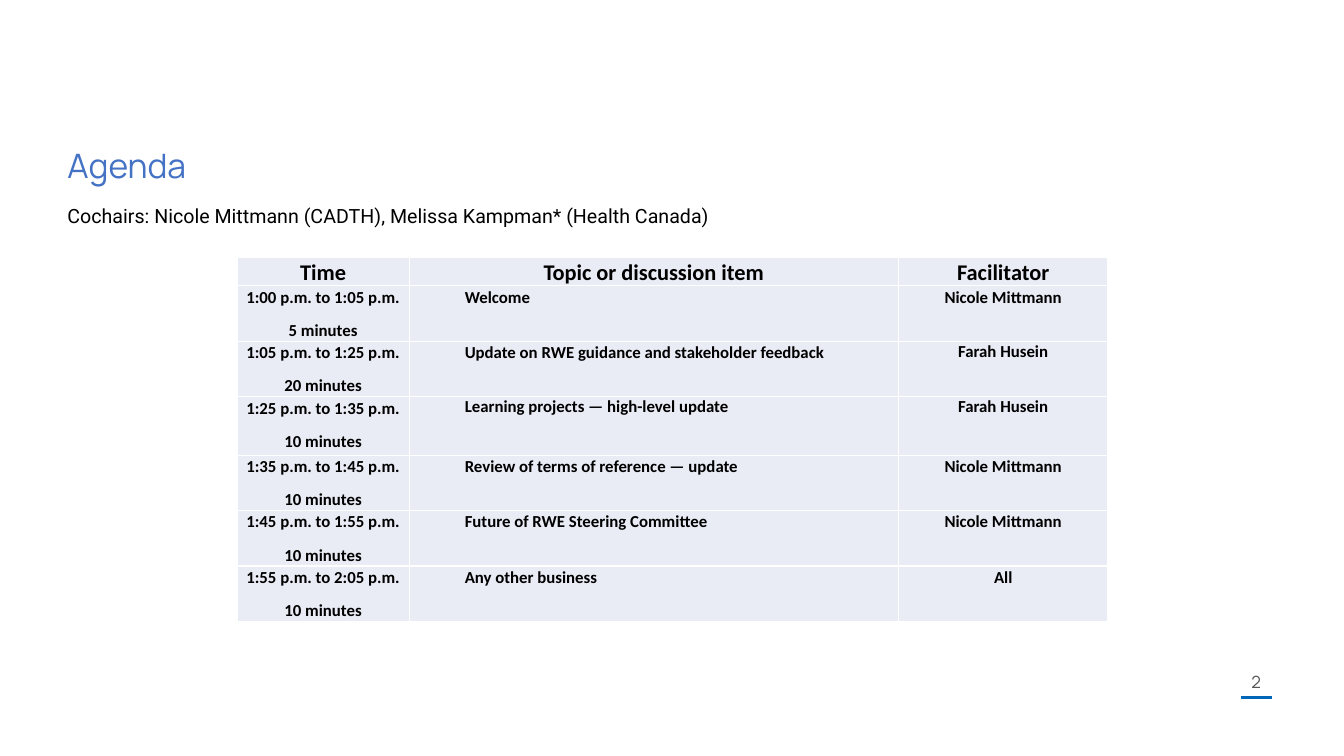
"""Build the agenda slide with its timetable."""
from lxml import etree
from pptx import Presentation
from pptx.dml.color import RGBColor
from pptx.enum.shapes import MSO_CONNECTOR
from pptx.enum.text import MSO_ANCHOR, PP_ALIGN
from pptx.oxml.ns import qn
from pptx.util import Inches, Pt

LEFT, CENTER = PP_ALIGN.LEFT, PP_ALIGN.CENTER
TOP, MIDDLE = MSO_ANCHOR.TOP, MSO_ANCHOR.MIDDLE
STRAIGHT = MSO_CONNECTOR.STRAIGHT

COLORS = {
    "title": "4472C4",
    "text": "000000",
    "number": "545454",
    "rule": "0067B9",
    "cell": "E9EBF5",
    "border": "FFFFFF",
}
WIDTHS = [1.71, 4.85, 2.08]
HEIGHTS = [0.28, 0.55, 0.55, 0.58, 0.55, 0.55, 0.55]
HEADS = ["Time", "Topic or discussion item", "Facilitator"]
AGENDA = [
    ("1:00 p.m. to 1:05 p.m.", "5 minutes", "Welcome", "Nicole Mittmann"),
    ("1:05 p.m. to 1:25 p.m.", "20 minutes",
     "Update on RWE guidance and stakeholder feedback", "Farah Husein"),
    ("1:25 p.m. to 1:35 p.m.", "10 minutes",
     "Learning projects — high-level update", "Farah Husein"),
    ("1:35 p.m. to 1:45 p.m.", "10 minutes",
     "Review of terms of reference — update", "Nicole Mittmann"),
    ("1:45 p.m. to 1:55 p.m.", "10 minutes",
     "Future of RWE Steering Committee", "Nicole Mittmann"),
    ("1:55 p.m. to 2:05 p.m.", "10 minutes", "Any other business", "All"),
]


def color(name):
    return RGBColor.from_string(COLORS[name])


def write(frame, *lines, font="Calibri", size=12, ink="text", bold=False,
          align=LEFT, indent=0, loose=False):
    for i, line in enumerate(lines):
        para = frame.add_paragraph() if i else frame.paragraphs[0]
        para.alignment = align
        if indent:
            props = para._p.get_or_add_pPr()
            props.set("marL", str(Inches(indent)))
            props.set("indent", "0")
        if loose:
            para.line_spacing = 1.07
            para.space_after = Pt(8)
        run = para.add_run()
        run.text = line
        run.font.name = font
        run.font.size = Pt(size)
        run.font.bold = bold
        run.font.color.rgb = color(ink)


def add_text(slide, box, text, wrap=True, anchor=TOP, **style):
    frame = slide.shapes.add_textbox(*map(Inches, box)).text_frame
    frame.word_wrap = wrap
    frame.vertical_anchor = anchor
    write(frame, text, **style)


def add_rule(slide, start, end):
    line = slide.shapes.add_connector(
        STRAIGHT, *map(Inches, start), *map(Inches, end))
    line.line.color.rgb = color("rule")
    line.line.width = Pt(2.25)
    etree.SubElement(line._element.spPr, qn("a:effectLst"))


def style_cell(cell):
    cell.margin_left = cell.margin_right = Inches(0.05)
    cell.margin_top = cell.margin_bottom = 0
    props = cell._tc.get_or_add_tcPr()
    for side in ("lnL", "lnR", "lnT", "lnB"):
        edge = etree.SubElement(props, qn(f"a:{side}"), w=str(Pt(1)))
        fill = etree.SubElement(edge, qn("a:solidFill"))
        etree.SubElement(fill, qn("a:srgbClr"), val=COLORS["border"])
    cell.fill.solid()
    cell.fill.fore_color.rgb = color("cell")


def add_agenda(slide):
    box = map(Inches, (2.35, 2.55, sum(WIDTHS), sum(HEIGHTS)))
    table = slide.shapes.add_table(len(HEIGHTS), len(WIDTHS), *box).table
    for col, width in zip(table.columns, WIDTHS):
        col.width = Inches(width)
    for row, height in zip(table.rows, HEIGHTS):
        row.height = Inches(height)
    for cell in table.iter_cells():
        style_cell(cell)
    for cell, head in zip(table.rows[0].cells, HEADS):
        write(cell.text_frame, head, size=16, bold=True, align=CENTER,
              loose=True)
    for i, (time, span, topic, host) in enumerate(AGENDA, 1):
        first, second, third = (c.text_frame for c in table.rows[i].cells)
        write(first, time, span, bold=True, align=CENTER, loose=True)
        write(second, topic, bold=True, indent=0.5,
              loose=not topic.startswith("Learning"))
        write(third, host, bold=True, align=CENTER,
              loose=host != "Farah Husein")


def main():
    deck = Presentation()
    deck.slide_width, deck.slide_height = Inches(13.33), Inches(7.5)
    slide = deck.slides.add_slide(deck.slide_layouts[6])
    add_rule(slide, (12.31, 6.92), (12.62, 6.92))
    add_text(slide, (0.57, 1.39, 9.64, 0.96), "Agenda",
             font="Manrope", size=24, ink="title")
    add_text(slide, (12.21, 6.63, 0.5, 0.26), "2", anchor=MIDDLE,
             font="Manrope", ink="number", align=CENTER)
    add_agenda(slide)
    add_text(slide, (0.57, 1.97, 6.68, 0.57),
             "Cochairs: Nicole Mittmann (CADTH), "
             "Melissa Kampman* (Health Canada)",
             wrap=False, font="Roboto", size=14)
    deck.save("out.pptx")


if __name__ == "__main__":
    main()
